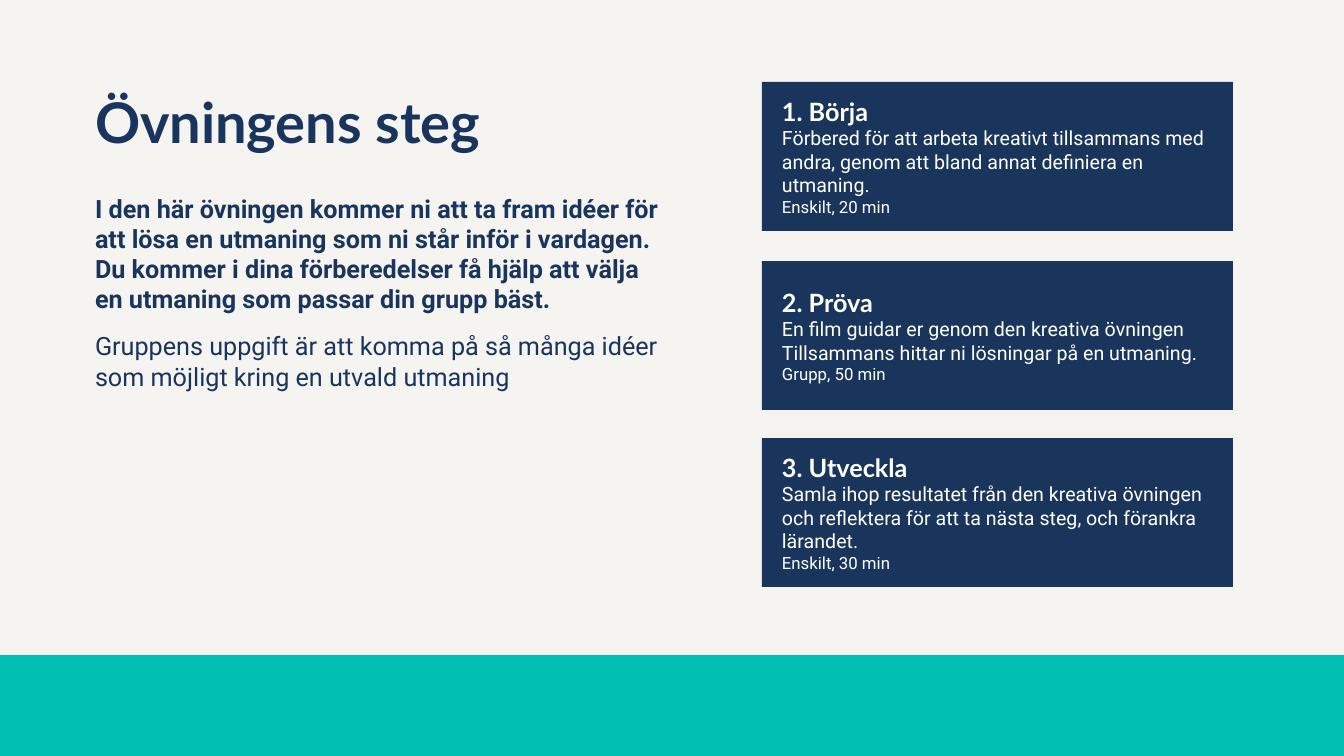
from lxml import etree
from pptx import Presentation
from pptx.dml.color import RGBColor
from pptx.enum.shapes import MSO_SHAPE
from pptx.enum.text import MSO_ANCHOR, MSO_AUTO_SIZE, PP_ALIGN
from pptx.oxml.ns import qn
from pptx.util import Emu, Pt

SLIDE_W, SLIDE_H = 1344, 756
EMU_PER_PX = 12192000 / SLIDE_W
COLORS = {"paper": "F5F4F0", "teal": "00BFB3", "ink": "1A355D",
          "card": "1A355C", "white": "FEFFFF"}


def px(*lengths):
    return [Emu(round(length * EMU_PER_PX)) for length in lengths]


def set_font(font, name, size, color, bold=False):
    font.name, font.size, font.bold = name, Pt(size), bold
    font.color.rgb = RGBColor.from_string(COLORS[color])


prs = Presentation()
prs.slide_width, prs.slide_height = px(SLIDE_W, SLIDE_H)
slide = prs.slides.add_slide(prs.slide_layouts[1])
slide.background.fill.solid()
slide.background.fill.fore_color.rgb = RGBColor.from_string(COLORS["paper"])

# Heading and introduction
heading, intro = slide.shapes.title, slide.placeholders[1]
places = [(heading, (95, 95, 1159, 61), 0, MSO_ANCHOR.BOTTOM),
          (intro, (95, 158, 568, 371), 35, MSO_ANCHOR.TOP)]
for holder, box, inset_top, anchor in places:
    holder.left, holder.top, holder.width, holder.height = px(*box)
    frame = holder.text_frame
    frame.margin_left, frame.margin_top, frame.margin_right, frame.margin_bottom = px(0, inset_top, 0, 0)
    frame.vertical_anchor = anchor
    frame.auto_size = MSO_AUTO_SIZE.NONE
    frame.word_wrap = True

heading.text_frame.text = "Övningens steg"
heading_line = heading.text_frame.paragraphs[0]
heading_line.alignment = PP_ALIGN.LEFT
heading_line.line_spacing = 0.9
set_font(heading_line.font, "Lato", 40, "ink", bold=True)

intro.text_frame.text = (
    "I den här övningen kommer ni att ta fram idéer för att lösa en utmaning som ni står inför "
    "i vardagen. Du kommer i dina förberedelser få hjälp att välja en utmaning som passar din "
    "grupp bäst.\n"
    "Gruppens uppgift är att komma på så många idéer som möjligt kring en utvald utmaning")
for index, paragraph in enumerate(intro.text_frame.paragraphs):
    paragraph.space_before, paragraph.space_after = Pt(0), Pt(12)
    set_font(paragraph.font, "Roboto", 18, "ink", bold=index == 0)
    properties = paragraph._p.get_or_add_pPr()
    properties.set("marL", "0")
    properties.set("indent", "0")
    properties.find(qn("a:defRPr")).addprevious(etree.Element(qn("a:buNone")))

# Band along the bottom edge
BAND_TOP = 655
band = slide.shapes.add_shape(MSO_SHAPE.RECTANGLE, *px(0, BAND_TOP, SLIDE_W, SLIDE_H - BAND_TOP))
band.shadow.inherit = False
band.fill.solid()
band.fill.fore_color.rgb = RGBColor.from_string(COLORS["teal"])
band.line.fill.background()

# Step cards
steps = [
    (82, "1. Börja", "Förbered för att arbeta kreativt tillsammans med andra, genom att bland "
     "annat definiera en utmaning.", "Enskilt, 20 min"),
    (261, "2. Pröva", "En film guidar er genom den kreativa övningen Tillsammans hittar ni "
     "lösningar på en utmaning.", "Grupp, 50 min"),
    (438, "3. Utveckla", "Samla ihop resultatet från den kreativa övningen och reflektera för "
     "att ta nästa steg, och förankra lärandet.", "Enskilt, 30 min"),
]
for top, step_name, description, duration in steps:
    card = slide.shapes.add_shape(MSO_SHAPE.RECTANGLE, *px(762, top, 471, 149))
    card.shadow.inherit = False
    card.fill.solid()
    card.fill.fore_color.rgb = RGBColor.from_string(COLORS["card"])
    card.line.fill.background()

    frame = card.text_frame
    frame.word_wrap = True
    frame.vertical_anchor = MSO_ANCHOR.MIDDLE
    frame.margin_left, frame.margin_top, frame.margin_right, frame.margin_bottom = px(20, 5, 10, 5)

    summary, timing = frame.paragraphs[0], frame.add_paragraph()
    summary.alignment = timing.alignment = PP_ALIGN.LEFT
    name_run = summary.add_run()
    name_run.text = step_name
    set_font(name_run.font, "Lato", 18, "white", bold=True)
    summary.add_line_break()
    description_run = summary.add_run()
    description_run.text = description
    set_font(description_run.font, "Roboto", 14, "white")
    timing.text = duration
    set_font(timing.font, "Roboto", 12, "white")

prs.save("out.pptx")
